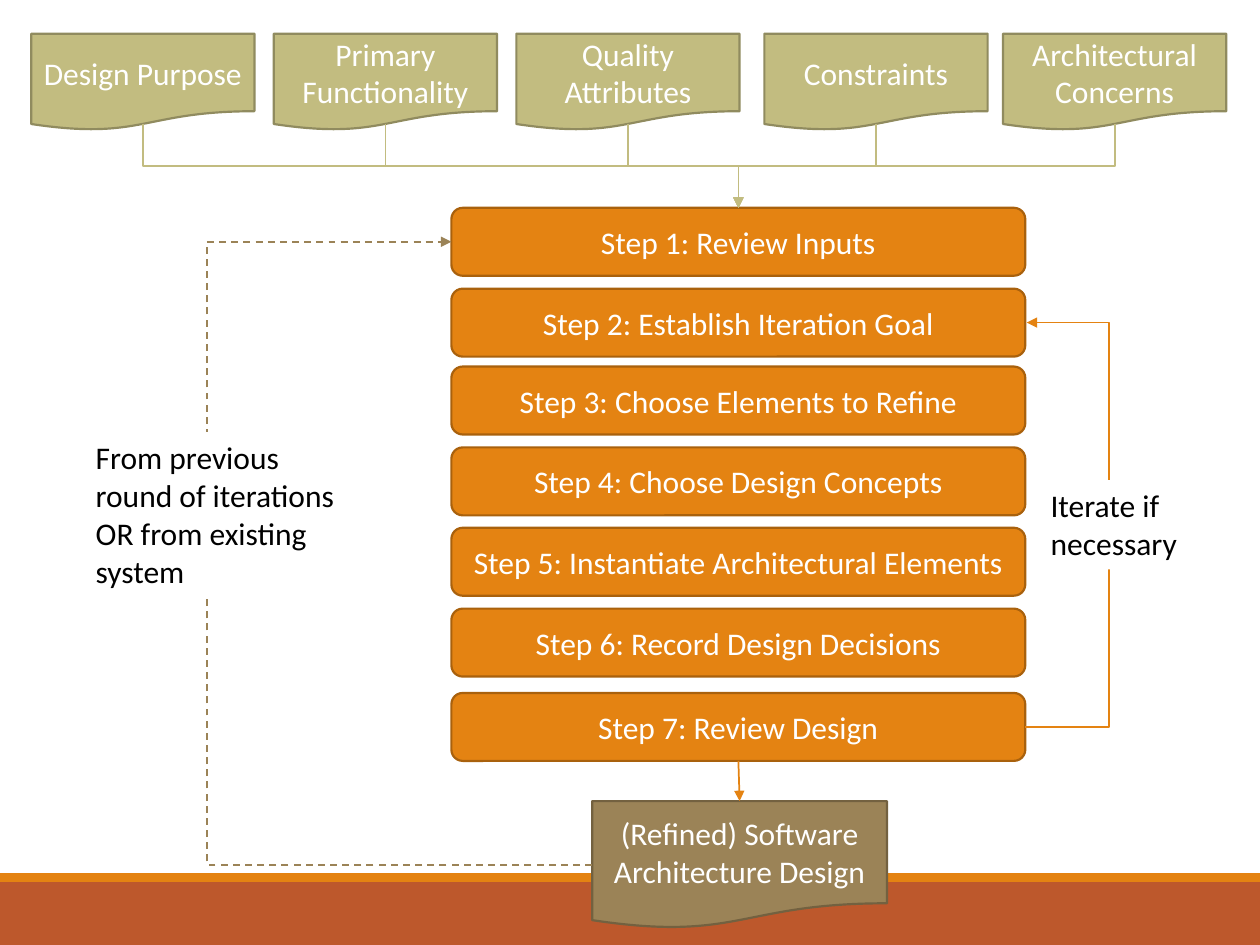
import pptx
import pptx.util
import pptx.dml.color
import pptx.enum.dml
import pptx.enum.shapes
import pptx.enum.text
import pptx.oxml.ns
import lxml.etree

Cm, Pt = pptx.util.Cm, pptx.util.Pt
KIND = pptx.enum.shapes.MSO_SHAPE
LINK = pptx.enum.shapes.MSO_CONNECTOR
ALIGN = pptx.enum.text.PP_ALIGN
ANCHOR = pptx.enum.text.MSO_ANCHOR
qn = pptx.oxml.ns.qn

# Content: lengths in cm
HUES = {
    "white": "FFFFFF", "black": "000000", "rust": "BD582C",
    "orange": "E48312", "amber": "A9610D",
    "sage": "C2BC80", "olive": "908B5F",
    "tan": "9B8357", "brown": "736140",
}
BANDS = [(17.78, 1.27, "rust"), (17.6, 0.18, "orange")]
INPUTS = [
    (0.63, "Design Purpose"),
    (5.52, "Primary Functionality"),
    (10.41, "Quality Attributes"),
    (15.41, "Constraints"),
    (20.22, "Architectural Concerns"),
]
STEPS = [
    (4.19, "Step 1: Review Inputs"),
    (5.82, "Step 2: Establish Iteration Goal"),
    (7.39, "Step 3: Choose Elements to Refine"),
    (9.02, "Step 4: Choose Design Concepts"),
    (10.64, "Step 5: Instantiate Architectural Elements"),
    (12.27, "Step 6: Record Design Decisions"),
    (13.97, "Step 7: Review Design"),
]
RESULT = "(Refined) Software Architecture Design"
AGAIN = "Iterate if necessary"
BEFORE = "From previous round of iterations OR from existing system"

IN_TOP, IN_W, IN_H = 0.68, 4.5, 1.95
IN_END = 2.51  # where the wavy edge meets its link
STEP_X, STEP_W, STEP_H = 9.1, 11.57, 1.37
OUT_X, OUT_Y, OUT_W, OUT_H = 11.94, 16.15, 5.94, 2.57
MID = STEP_X + STEP_W / 2
RIGHT = STEP_X + STEP_W

deck = pptx.Presentation()
deck.slide_width, deck.slide_height = Cm(25.4), Cm(19.05)
slide = deck.slides.add_slide(deck.slide_layouts[6])


def rgb(hue):
    return pptx.dml.color.RGBColor.from_string(HUES[hue])


def block(kind, x, y, w, h, fill, edge=None, text="", ink="white", note=False):
    shape = slide.shapes.add_shape(kind, Cm(x), Cm(y), Cm(w), Cm(h))
    shape.shadow.inherit = False
    shape.fill.solid()
    shape.fill.fore_color.rgb = rgb(fill)
    if edge:
        shape.line.color.rgb = rgb(edge)
        shape.line.width = Pt(1.25)
    else:
        shape.line.fill.background()
    if text:
        frame = shape.text_frame
        frame.word_wrap = True
        frame.vertical_anchor = ANCHOR.TOP if note else ANCHOR.MIDDLE
        frame.text = text
        para = frame.paragraphs[0]
        para.alignment = ALIGN.LEFT if note else ALIGN.CENTER
        font = para.runs[0].font
        font.name, font.size = "Calibri", Pt(18)
        font.color.rgb = rgb(ink)


def arrow(kind, x1, y1, x2, y2, hue):
    link = slide.shapes.add_connector(kind, Cm(x1), Cm(y1), Cm(x2), Cm(y2))
    link.line.color.rgb = rgb(hue)
    link.line.width = Pt(1)
    line = link.line._get_or_add_ln()
    lxml.etree.SubElement(line, qn("a:tailEnd"), type="triangle")
    lxml.etree.SubElement(link._element.spPr, qn("a:effectLst"))
    return link


def drop(x1, y1, x2, y2, hue):
    """Elbow that leaves and arrives upright: a flat one, turned."""
    mx, my = (x1 + x2) / 2, (y1 + y2) / 2
    dx, dy = abs(x2 - x1) / 2, (y2 - y1) / 2
    turn = 90
    if x2 > x1:
        turn, dy = 270, -dy
    link = arrow(LINK.ELBOW, mx - dy, my - dx, mx + dy, my + dx, hue)
    link._element.spPr.xfrm.set("rot", str(turn * 60000))


def loop(x1, y1, x2, y2, via, hue):
    """Elbow that swings out to the upright at via."""
    link = arrow(LINK.ELBOW, x1, y1, x2, y2, hue)
    bend = round((via - x1) / (x2 - x1) * 100000)
    guides = link._element.spPr.find(qn("a:prstGeom")).find(qn("a:avLst"))
    lxml.etree.SubElement(guides, qn("a:gd"), name="adj1", fmla=f"val {bend}")
    return link


# Footer bands
for y, h, hue in BANDS:
    block(KIND.RECTANGLE, 0, y, 25.4, h, hue)

# Steps
for y, text in STEPS:
    block(KIND.ROUNDED_RECTANGLE, STEP_X, y, STEP_W, STEP_H,
          "orange", "amber", text)
mids = [y + STEP_H / 2 for y, text in STEPS]

# Iteration loop and its label
loop(RIGHT, mids[6], RIGHT + 0.03, mids[1], 22.35, "orange")
block(KIND.RECTANGLE, 20.93, 9.68, 3.15, 1.8, "white",
      text=AGAIN, ink="black", note=True)

# Inputs, each led to step 1
for x, text in INPUTS:
    block(KIND.FLOWCHART_DOCUMENT, x, IN_TOP, IN_W, IN_H,
          "sage", "olive", text)
for x, text in INPUTS:
    drop(x + IN_W / 2, IN_END, MID, STEPS[0][0], "sage")

# Resulting design
block(KIND.FLOWCHART_DOCUMENT, OUT_X, OUT_Y, OUT_W, OUT_H,
      "tan", "brown", RESULT)
arrow(LINK.STRAIGHT, MID, STEPS[6][0] + STEP_H,
      OUT_X + OUT_W / 2, OUT_Y, "orange")

# Way back to step 1 and its label
back = loop(OUT_X, OUT_Y + OUT_H / 2, STEP_X, mids[0], 4.17, "tan")
back.line.dash_style = pptx.enum.dml.MSO_LINE.DASH
block(KIND.RECTANGLE, 1.68, 8.71, 5.64, 3.33, "white",
      text=BEFORE, ink="black", note=True)

deck.save("out.pptx")
